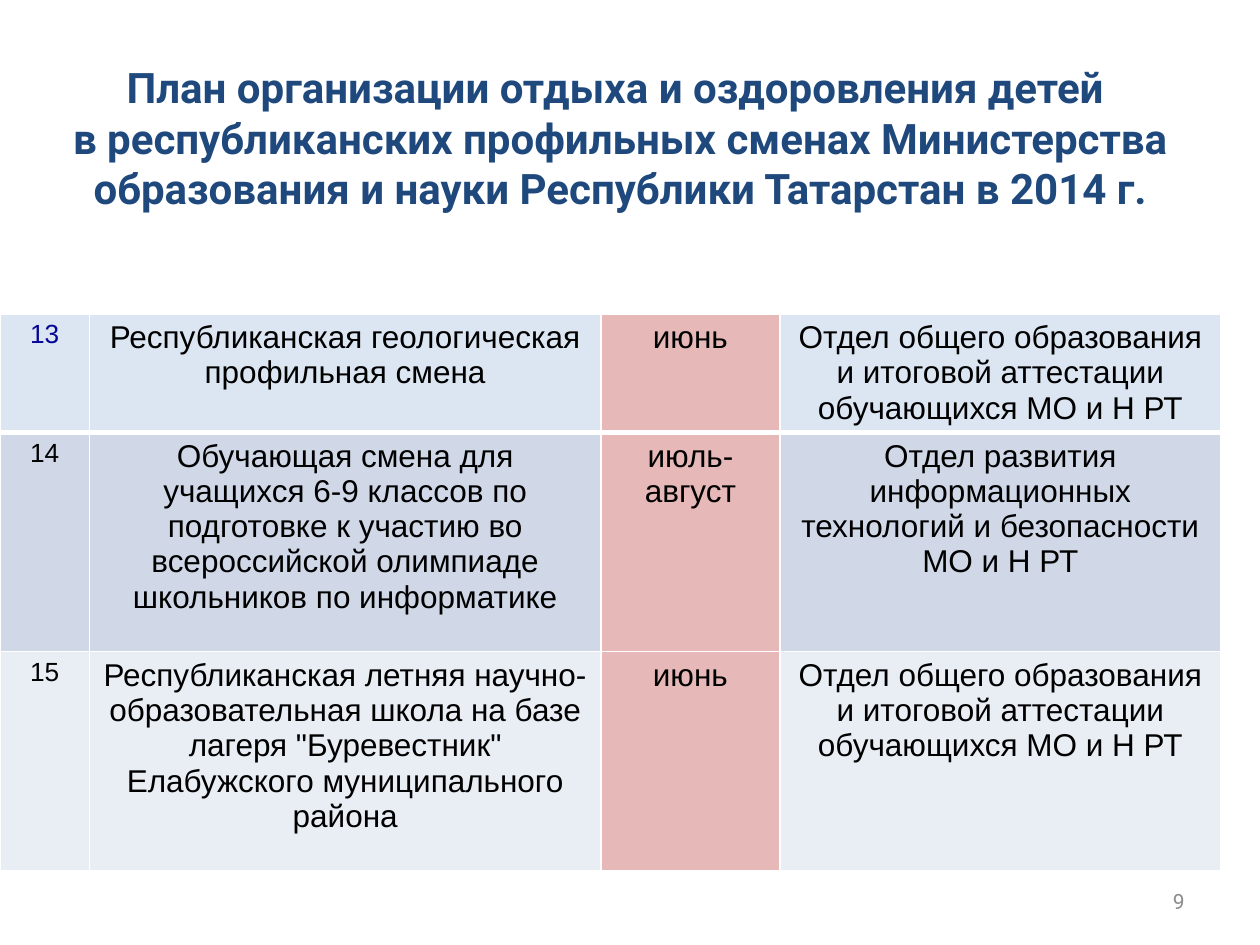
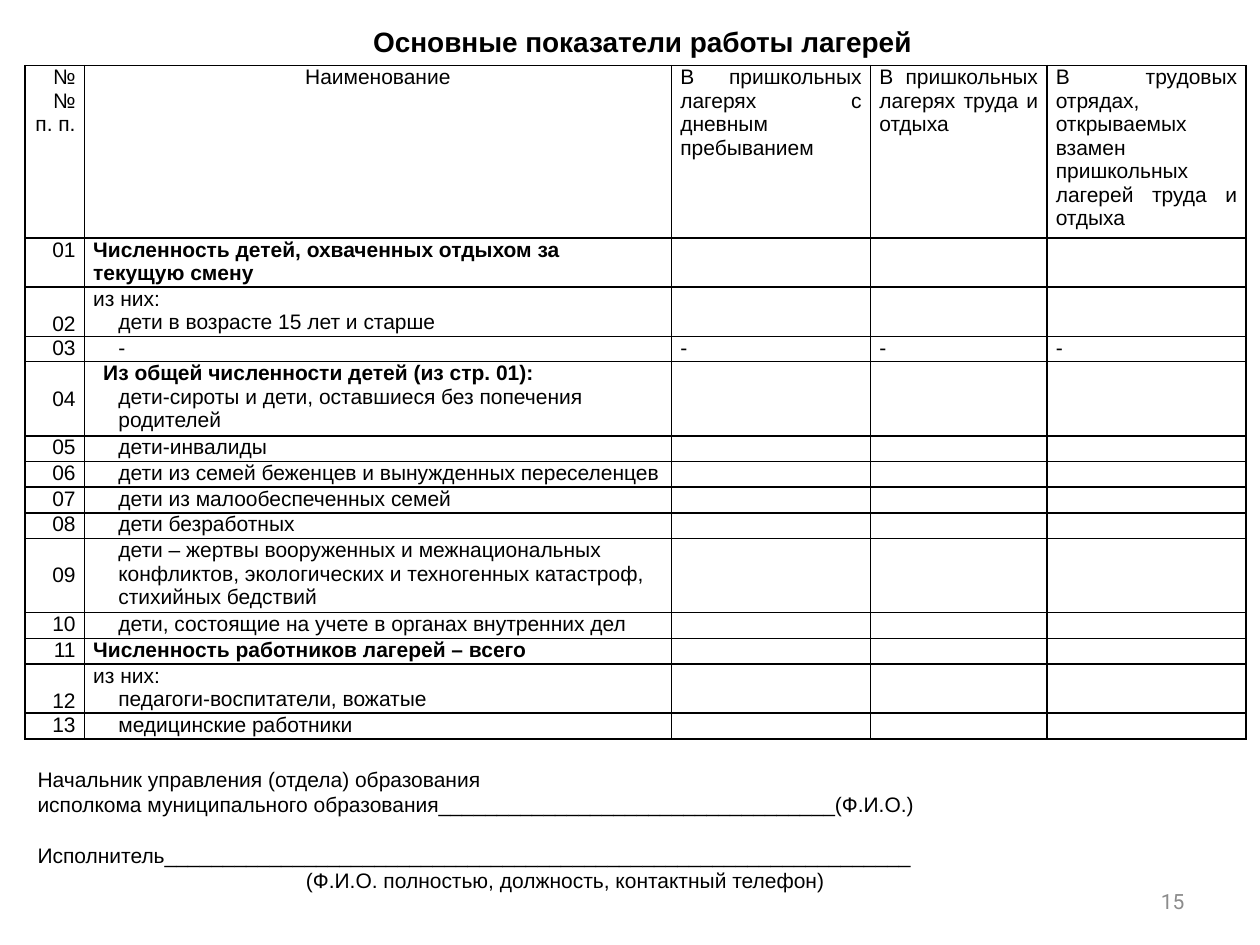
"""Build two slides on children's summer camps: a shift plan and a report form."""
from dataclasses import dataclass
from typing import Sequence

from lxml import etree
from pptx import Presentation
from pptx import util as u
from pptx.dml.color import RGBColor
from pptx.enum import text
from pptx.oxml import ns

Inches = u.Inches
ALIGN = text.PP_ALIGN
ANCHOR = text.MSO_ANCHOR


@dataclass(frozen=True)
class Theme:
    """Colours, fonts and type sizes of the deck."""
    body_font: str = "Arial"
    title_font: str = "Roboto"
    black: str = "000000"
    white: str = "FFFFFF"
    title_blue: str = "1F497D"
    number_blue: str = "060696"
    page_grey: str = "8C8C8C"
    month_pink: str = "E6B9B8"
    row_fills: tuple[str, ...] = ("DCE6F2", "D0D8E8", "E9EDF4")
    plan_title: int = 24
    form_title: int = 16
    plan_text: int = 18
    plan_number: int = 15
    small: int = 12
    thin: float = 1
    thick: float = 3


THEME = Theme()


@dataclass(frozen=True)
class Frame:
    """Position and size in inches."""
    left: float
    top: float
    width: float
    height: float

    def lengths(self) -> tuple[u.Length, ...]:
        """Return the four values as lengths."""
        return tuple(Inches(v) for v in (self.left, self.top, self.width, self.height))


@dataclass(frozen=True)
class Style:
    """Look of a run."""
    size: int = THEME.small
    color: str = THEME.black
    font: str = THEME.body_font
    bold: bool = False


@dataclass(frozen=True)
class Line:
    """One paragraph with its layout."""
    words: str
    align: ALIGN = ALIGN.LEFT
    style: Style = Style()
    indent: float = 0
    before: float = 0
    spacing: float | None = None


@dataclass(frozen=True)
class Shift:
    """One row of the shift plan."""
    name: str
    month: str
    department: str


@dataclass(frozen=True)
class Indicator:
    """One row of the report form."""
    height: float
    lines: tuple[Line, ...]
    number_anchor: ANCHOR = ANCHOR.TOP
    mark: str = ""


def item(words: str) -> Line:
    """Return an indented entry."""
    return Line(words, indent=0.2)


def heading(words: str, indent: float = 0) -> Line:
    """Return a bold entry."""
    return Line(words, style=Style(bold=True), indent=indent)


GENERAL_DEPARTMENT = "Отдел общего образования и итоговой аттестации обучающихся МО и Н РТ"
FIRST_SHIFT = 13
SHIFTS = (
    Shift("Республиканская геологическая профильная смена", "июнь", GENERAL_DEPARTMENT),
    Shift("Обучающая смена для учащихся 6-9 классов по подготовке к участию во "
          "всероссийской олимпиаде школьников по информатике", "июль-август",
          "Отдел развития информационных технологий и безопасности МО и Н РТ"),
    Shift("Республиканская летняя научно-образовательная школа на базе лагеря "
          "\"Буревестник\" Елабужского муниципального района", "июнь", GENERAL_DEPARTMENT),
)
FORM_HEADERS = (
    Line("№№ п. п.", ALIGN.RIGHT),
    Line("Наименование", ALIGN.CENTER),
    Line("В пришкольных лагерях с дневным пребыванием", ALIGN.JUSTIFY),
    Line("В пришкольных лагерях труда и отдыха", ALIGN.JUSTIFY),
    Line("В трудовых отрядах, открываемых взамен пришкольных лагерей труда и отдыха",
         ALIGN.JUSTIFY),
)
INDICATORS = (
    Indicator(0.39, (heading("Численность детей, охваченных отдыхом за\vтекущую смену"),)),
    Indicator(0.39, (Line("из них:"), item("дети в возрасте 15 лет и старше")), ANCHOR.BOTTOM),
    Indicator(0.2, (item("-"),), mark="-"),
    Indicator(0.59, (heading("Из общей численности детей (из стр. 01):", 0.08),
                     item("дети-сироты и дети, оставшиеся без попечения родителей")),
              ANCHOR.MIDDLE),
    Indicator(0.2, (item("дети-инвалиды"),)),
    Indicator(0.2, (item("дети из семей беженцев и вынужденных переселенцев"),)),
    Indicator(0.2, (item("дети из малообеспеченных семей"),)),
    Indicator(0.2, (item("дети безработных"),)),
    Indicator(0.59, (item("дети – жертвы вооруженных и межнациональных конфликтов, "
                          "экологических и техногенных катастроф, стихийных бедствий"),),
              ANCHOR.MIDDLE),
    Indicator(0.2, (item("дети, состоящие на учете в органах внутренних дел"),)),
    Indicator(0.2, (heading("Численность работников лагерей – всего"),)),
    Indicator(0.39, (Line("из них:"), item("педагоги-воспитатели, вожатые")), ANCHOR.BOTTOM),
    Indicator(0.2, (item("медицинские работники"),)),
)
SIGNATURES = (
    Line("Начальник управления (отдела) образования", spacing=14.5),
    Line("исполкома муниципального образования" + "_" * 34 + "(Ф.И.О.)", spacing=14.5),
    Line("Исполнитель" + "_" * 64, before=14.5, spacing=14.5),
    Line("(Ф.И.О. полностью, должность, контактный телефон)", indent=2.13, spacing=14.5),
)


def write_lines(frame, lines: Sequence[Line]) -> None:
    """Write the paragraphs into a text frame."""
    for index, line in enumerate(lines):
        para = frame.add_paragraph() if index else frame.paragraphs[0]
        para.text = line.words
        para.alignment = line.align
        if line.indent:
            para._p.get_or_add_pPr().set("marL", str(Inches(line.indent)))
        if line.before:
            para.space_before = u.Pt(line.before)
        if line.spacing:
            para.line_spacing = u.Pt(line.spacing)
        for span in para.runs:
            span.font.name = line.style.font
            span.font.size = u.Pt(line.style.size)
            span.font.bold = line.style.bold
            span.font.color.rgb = RGBColor.from_string(line.style.color)
        if not para.runs:
            etree.SubElement(para._p, ns.qn("a:endParaRPr"), sz=str(line.style.size * 100))


def add_title(page, frame: Frame, line: Line, anchor: ANCHOR) -> None:
    """Move and format the title placeholder."""
    title = page.shapes.title
    title.left, title.top, title.width, title.height = frame.lengths()
    title.text_frame.auto_size = text.MSO_AUTO_SIZE.NONE
    title.text_frame.vertical_anchor = anchor
    write_lines(title.text_frame, [line])


def add_text(page, frame: Frame, lines: Sequence[Line], anchor: ANCHOR = ANCHOR.TOP) -> None:
    """Add a wrapping text box."""
    box = page.shapes.add_textbox(*frame.lengths())
    box.text_frame.word_wrap = True
    box.text_frame.vertical_anchor = anchor
    write_lines(box.text_frame, lines)


def add_page_number(page, number: int) -> None:
    """Add the number at the lower right."""
    style = Style(color=THEME.page_grey, font=THEME.title_font)
    add_text(page, Frame(7.17, 6.95, 2.33, 0.4),
             [Line(str(number), ALIGN.RIGHT, style)], ANCHOR.MIDDLE)


def add_grid(page, left: float, top: float, widths: Sequence[float], heights: Sequence[float]):
    """Add a table without banding and with the given columns and rows."""
    frame = Frame(left, top, sum(widths), sum(heights))
    table = page.shapes.add_table(len(heights), len(widths), *frame.lengths()).table
    table.first_row = table.horz_banding = False
    for column, width in zip(table.columns, widths):
        column.width = Inches(width)
    for row, height in zip(table.rows, heights):
        row.height = Inches(height)
    return table


def set_borders(cell, color: str, top: float = THEME.thin, bottom: float = THEME.thin) -> None:
    """Draw the four borders of a cell."""
    properties = cell._tc.get_or_add_tcPr()
    sides = {"L": THEME.thin, "R": THEME.thin, "T": top, "B": bottom}
    for side, width in sides.items():
        border = etree.SubElement(properties, ns.qn(f"a:ln{side}"), w=str(u.Pt(width)))
        fill = etree.SubElement(border, ns.qn("a:solidFill"))
        etree.SubElement(fill, ns.qn("a:srgbClr"), val=color)


def build_plan(page) -> None:
    """Build the plan of camp shifts."""
    title = ("План организации отдыха и оздоровления детей \vв республиканских профильных "
             "сменах Министерства образования и науки Республики Татарстан в 2014 г.")
    style = Style(THEME.plan_title, THEME.title_blue, THEME.title_font, True)
    add_title(page, Frame(0.28, 0.44, 9.29, 1.72), Line(title, ALIGN.CENTER, style), ANCHOR.TOP)
    table = add_grid(page, 0, 2.49, (0.71, 4.06, 1.42, 3.5), (0.86, 1.74, 1.74))
    for row, (shift, row_fill) in enumerate(zip(SHIFTS, THEME.row_fills)):
        number = Style(THEME.plan_number, THEME.black if row else THEME.number_blue)
        body = Style(THEME.plan_text)
        entries = (
            (str(FIRST_SHIFT + row), number, row_fill),
            (shift.name, body, row_fill),
            (shift.month, body, THEME.month_pink),
            (shift.department, body, row_fill),
        )
        for column, (words, look, fill) in enumerate(entries):
            cell = table.cell(row, column)
            set_borders(cell, THEME.white,
                        top=THEME.thick if row == 1 else THEME.thin,
                        bottom=THEME.thick if row == 0 else THEME.thin)
            cell.fill.solid()
            cell.fill.fore_color.rgb = RGBColor.from_string(fill)
            write_lines(cell.text_frame, [Line(words, ALIGN.CENTER, look)])
    add_page_number(page, 9)


def fill_form_cell(cell, lines: Sequence[Line], anchor: ANCHOR = ANCHOR.TOP) -> None:
    """Fill one outlined cell of the report form."""
    set_borders(cell, THEME.black)
    cell.fill.background()
    cell.margin_left = cell.margin_right = Inches(0.07)
    cell.margin_top = cell.margin_bottom = Inches(0)
    cell.vertical_anchor = anchor
    write_lines(cell.text_frame, lines)


def build_form(page) -> None:
    """Build the report form with its signature lines."""
    style = Style(THEME.form_title, bold=True)
    add_title(page, Frame(2.26, 0.14, 5.68, 0.38),
              Line("Основные показатели работы лагерей", ALIGN.CENTER, style), ANCHOR.MIDDLE)
    heights = [1.37] + [indicator.height for indicator in INDICATORS]
    table = add_grid(page, 0.2, 0.52, (0.47, 4.66, 1.58, 1.4, 1.58), heights)
    for column, header in enumerate(FORM_HEADERS):
        fill_form_cell(table.cell(0, column), [header])
    for row, indicator in enumerate(INDICATORS, 1):
        fill_form_cell(table.cell(row, 0), [Line(f"{row:02}", ALIGN.RIGHT)],
                       indicator.number_anchor)
        fill_form_cell(table.cell(row, 1), indicator.lines)
        for column in range(2, len(FORM_HEADERS)):
            fill_form_cell(table.cell(row, column), [Line(indicator.mark)])
    add_page_number(page, 15)
    add_text(page, Frame(0.2, 6.03, 9.8, 1.11), SIGNATURES)


def main() -> None:
    """Build and save the deck."""
    deck = Presentation()
    deck.slide_width, deck.slide_height = Inches(10), Inches(7.5)
    title_only = deck.slide_layouts[5]
    for build in (build_plan, build_form):
        build(deck.slides.add_slide(title_only))
    deck.save("out.pptx")


if __name__ == "__main__":
    main()
